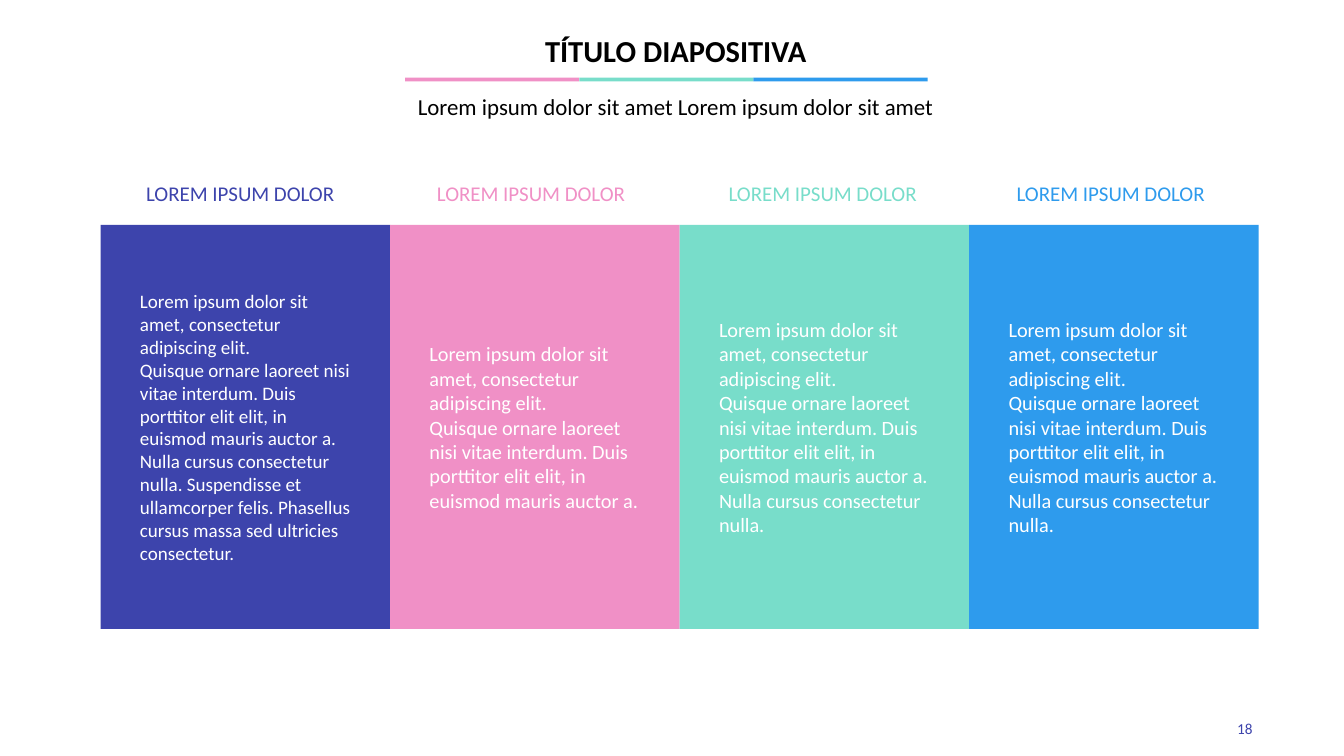
from pptx import Presentation
from pptx.dml.color import RGBColor
from pptx.enum import shapes, text
from pptx.util import Pt

COLORS = {
    "indigo": "3D44AC",
    "pink": "F090C6",
    "mint": "78DDCA",
    "blue": "2E9BED",
    "white": "FFFFFF",
    "black": "000000",
}
FONT = "Calibri"

deck = Presentation()
deck.slide_width, deck.slide_height = Pt(1058.4), Pt(595.4)
page = deck.slides.add_slide(deck.slide_layouts[6])


def add_block(left, top, width, height, color):
    block = page.shapes.add_shape(shapes.MSO_SHAPE.RECTANGLE,
                                  Pt(left), Pt(top), Pt(width), Pt(height))
    block.shadow.inherit = False
    block.fill.solid()
    block.fill.fore_color.rgb = RGBColor.from_string(COLORS[color])
    block.line.fill.background()
    return block


def write(box, lines, size, color, align, inset=None, bold=False):
    frame = box.text_frame
    frame.word_wrap = True
    if inset is not None:
        frame.margin_left = frame.margin_right = Pt(inset)
        frame.margin_top = frame.margin_bottom = Pt(inset)
    for index, line in enumerate(lines):
        para = frame.add_paragraph() if index else frame.paragraphs[0]
        para.alignment = align
        span = para.add_run()
        span.text = line
        span.font.name = FONT
        span.font.size = Pt(size)
        span.font.bold = bold
        span.font.color.rgb = RGBColor.from_string(COLORS[color])


LEFT, CENTER, RIGHT = text.PP_ALIGN.LEFT, text.PP_ALIGN.CENTER, text.PP_ALIGN.RIGHT

# Title and subtitle
title = page.shapes.add_textbox(Pt(169.2), Pt(25.2), Pt(725.8), Pt(26.6))
write(title, ["TÍTULO DIAPOSITIVA"], 24, "black", CENTER, inset=0, bold=True)
subtitle = page.shapes.add_textbox(Pt(169.2), Pt(69.8), Pt(725.8), Pt(23.8))
write(subtitle, ["Lorem ipsum dolor sit amet Lorem ipsum dolor sit amet"],
      18, "black", CENTER)

# Three-colour rule under the title
RULE_WIDTH = 137.2
for index, color in enumerate(["pink", "mint", "blue"]):
    add_block(319 + index * RULE_WIDTH, 61.2, RULE_WIDTH, 2.9, color)

# Four columns: heading above a coloured panel
INTRO = "Lorem ipsum dolor sit amet, consectetur adipiscing elit."
SHORT = ("Quisque ornare laoreet nisi vitae interdum. Duis porttitor elit elit, "
         "in euismod mauris auctor a.")
MEDIUM = SHORT + " Nulla cursus consectetur nulla."
LONG = MEDIUM + (" Suspendisse et ullamcorper felis. Phasellus cursus massa "
                 "sed ultricies consectetur.")
COLUMN_WIDTH = 228
columns = [  # colour, heading left, body, body size
    ("indigo", 77, LONG, 15),
    ("pink", 306, SHORT, 16),
    ("mint", 535.7, MEDIUM, 16),
    ("blue", 762.5, MEDIUM, 16),
]
for index, (color, heading_left, body, size) in enumerate(columns):
    heading = page.shapes.add_textbox(Pt(heading_left), Pt(139),
                                      Pt(COLUMN_WIDTH), Pt(27.4))
    write(heading, ["LOREM IPSUM DOLOR "], 16.5, color, CENTER)
    panel = add_block(79.2 + index * COLUMN_WIDTH, 177.1, COLUMN_WIDTH, 318.2, color)
    panel.text_frame.vertical_anchor = text.MSO_ANCHOR.MIDDLE
    write(panel, [INTRO, body], size, "white", LEFT, inset=31)

# Page number
number = page.shapes.add_textbox(Pt(959.8), Pt(566.6), Pt(26.6), Pt(14.4))
write(number, ["18"], 12, "indigo", RIGHT, inset=0)

deck.save("out.pptx")
